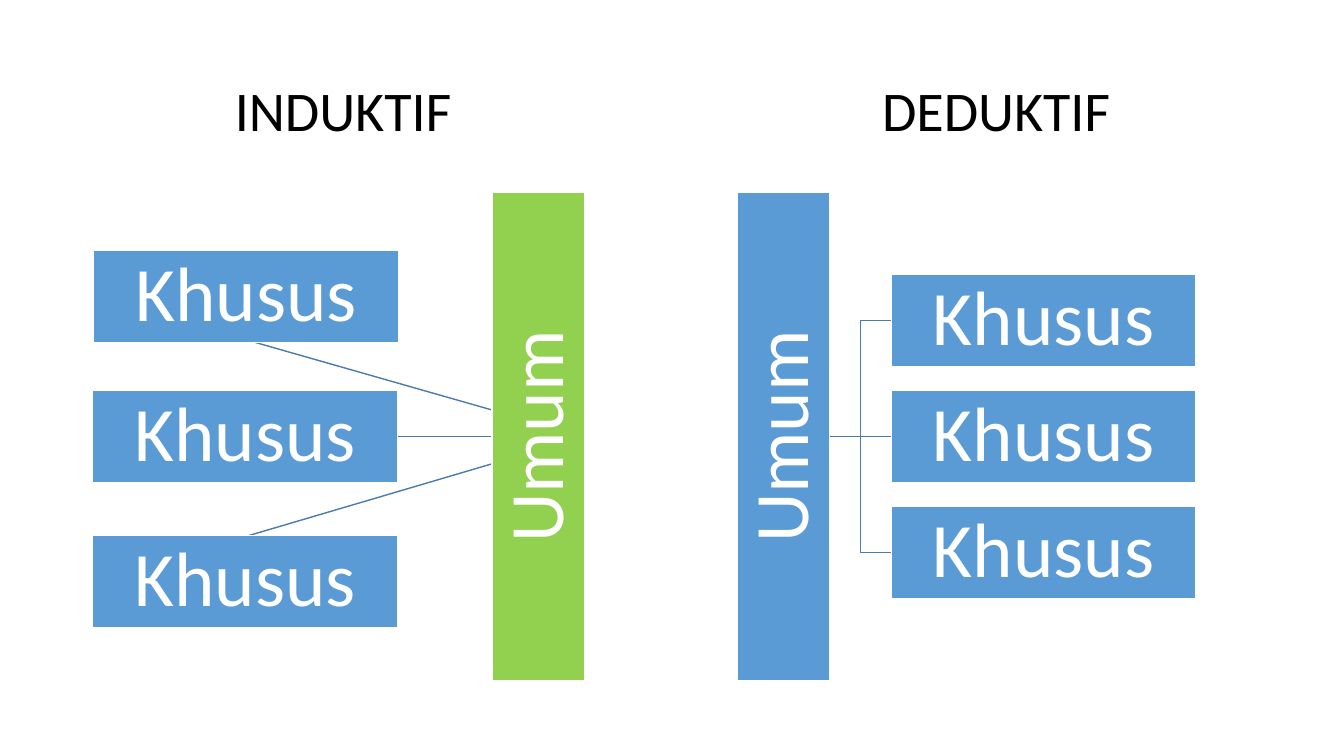
from dataclasses import dataclass

import pptx
import pptx.dml.color
import pptx.enum.shapes
import pptx.enum.text
import pptx.oxml
import pptx.oxml.ns
import pptx.shapes.autoshape
import pptx.slide
import pptx.text.text
import pptx.util

Inches = pptx.util.Inches
RGBColor = pptx.dml.color.RGBColor
Connector = pptx.enum.shapes.MSO_CONNECTOR

BLUE = RGBColor(0x5B, 0x9B, 0xD5)
GREEN = RGBColor(0x92, 0xD0, 0x50)
LINK_BLUE = RGBColor(0x49, 0x7C, 0xAB)
WHITE = RGBColor(0xFF, 0xFF, 0xFF)
BLACK = RGBColor(0x00, 0x00, 0x00)

FONT = "Calibri"
MIDDLE = 4.33
BAR_LENGTH = 4.85
BOX_WIDTH = 3.02
BOX_HEIGHT = 0.92


@dataclass(frozen=True)
class Box:
    left: float
    middle: float


@dataclass(frozen=True)
class Reasoning:
    title: str
    title_left: float
    title_width: float
    bar_center: float
    bar_color: RGBColor
    link: Connector
    specifics: tuple[Box, ...]


REASONINGS = (
    Reasoning("INDUKTIF", 2.23, 2.38, 5.34, GREEN, Connector.STRAIGHT,
              (Box(0.93, 2.94), Box(0.92, MIDDLE), Box(0.92, 5.77))),
    Reasoning("DEDUKTIF", 8.65, 2.49, 7.77, BLUE, Connector.ELBOW,
              tuple(Box(8.84, MIDDLE + step * 1.15) for step in (-1, 0, 1))),
)


def add_run(paragraph: pptx.text.text._Paragraph, words: str, size: int, color: RGBColor) -> None:
    run = paragraph.add_run()
    run.text = words
    run.font.name = FONT
    run.font.size = pptx.util.Pt(size)
    run.font.color.rgb = color


def add_title(slide: pptx.slide.Slide, reasoning: Reasoning) -> None:
    title = slide.shapes.add_textbox(Inches(reasoning.title_left), Inches(0.7),
                                     Inches(reasoning.title_width), Inches(0.77))
    frame = title.text_frame
    frame.word_wrap = False
    frame.auto_size = pptx.enum.text.MSO_AUTO_SIZE.SHAPE_TO_FIT_TEXT
    add_run(frame.paragraphs[0], reasoning.title, 40, BLACK)


def add_block(slide: pptx.slide.Slide, left: float, middle: float, width: float,
              words: str, color: RGBColor) -> pptx.shapes.autoshape.Shape:
    block = slide.shapes.add_shape(
        pptx.enum.shapes.MSO_SHAPE.RECTANGLE, Inches(left), Inches(middle - BOX_HEIGHT / 2),
        Inches(width), Inches(BOX_HEIGHT))
    block.shadow.inherit = False
    block.fill.solid()
    block.fill.fore_color.rgb = color
    block.line.color.rgb = WHITE
    block.line.width = pptx.util.Pt(1)
    frame = block.text_frame
    frame.word_wrap = True
    frame.vertical_anchor = pptx.enum.text.MSO_ANCHOR.MIDDLE
    frame.margin_left = frame.margin_right = Inches(0.04)
    frame.margin_top = frame.margin_bottom = Inches(0.04)
    paragraph = frame.paragraphs[0]
    paragraph.alignment = pptx.enum.text.PP_ALIGN.CENTER
    paragraph.line_spacing = 0.9
    add_run(paragraph, words, 55, WHITE)
    return block


def add_link(slide: pptx.slide.Slide, kind: Connector, start_x: float, box: Box) -> None:
    """Join the bar's right edge to the left edge of a box."""
    bends = box.middle != MIDDLE
    link = slide.shapes.add_connector(
        kind if bends else Connector.STRAIGHT,
        Inches(start_x), Inches(MIDDLE), Inches(box.left), Inches(box.middle))
    link.line.color.rgb = LINK_BLUE
    link.line.width = pptx.util.Pt(1)
    properties = link._element.spPr
    properties.append(pptx.oxml.parse_xml(
        f"<a:effectLst {pptx.oxml.ns.nsdecls('a')}/>"))


def add_reasoning(slide: pptx.slide.Slide, reasoning: Reasoning) -> None:
    for box in reversed(reasoning.specifics):
        add_link(slide, reasoning.link, reasoning.bar_center + BOX_HEIGHT / 2, box)
    general = add_block(slide, reasoning.bar_center - BAR_LENGTH / 2, MIDDLE,
                        BAR_LENGTH, "Umum", reasoning.bar_color)
    general.rotation = 270
    for box in reasoning.specifics:
        add_block(slide, box.left, box.middle, BOX_WIDTH, "Khusus", BLUE)
    add_title(slide, reasoning)


def main() -> None:
    presentation = pptx.Presentation()
    presentation.slide_width = Inches(13.33)
    presentation.slide_height = Inches(7.5)
    slide = presentation.slides.add_slide(presentation.slide_layouts[6])
    for reasoning in REASONINGS:
        add_reasoning(slide, reasoning)
    presentation.save("out.pptx")


if __name__ == "__main__":
    main()
